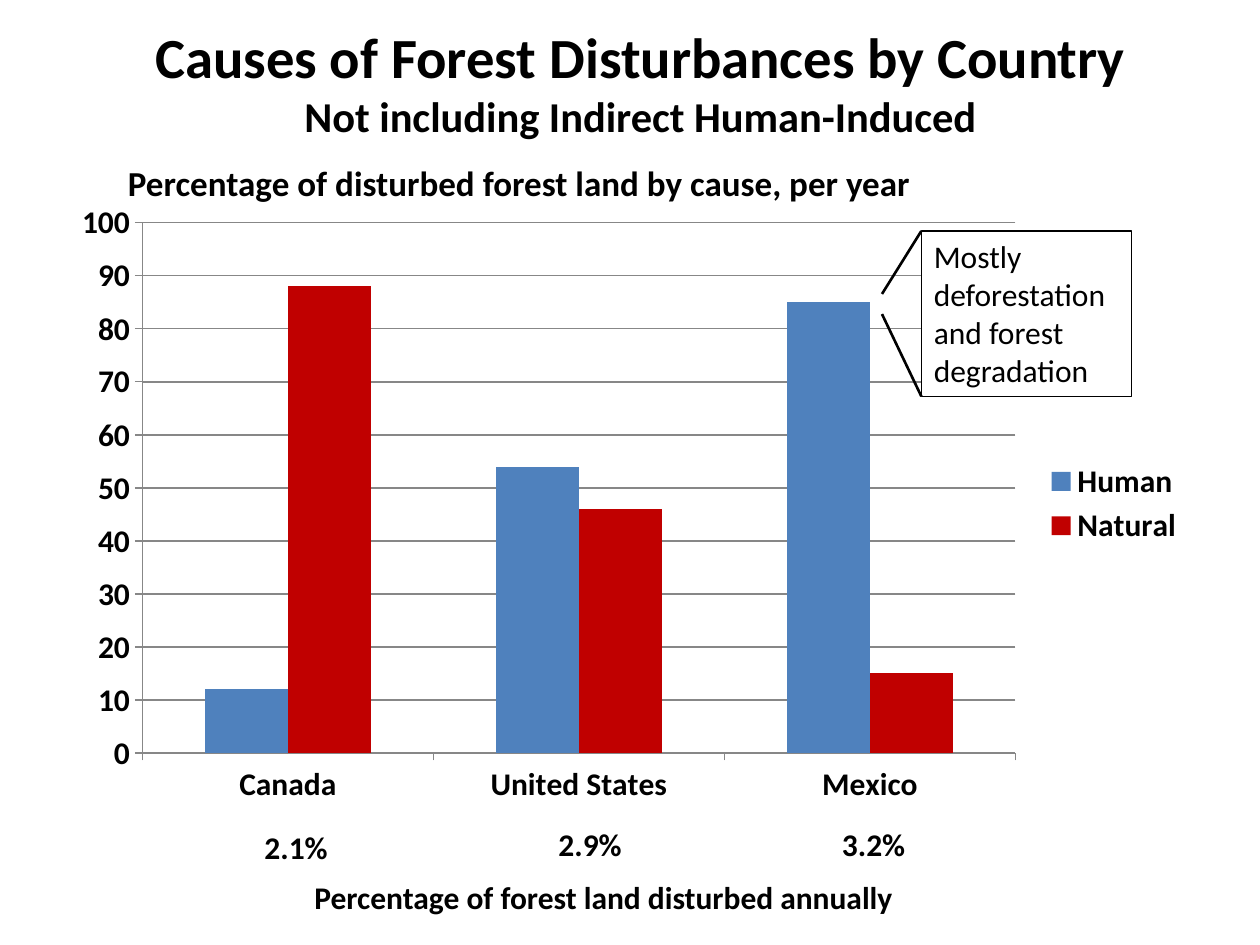
from dataclasses import dataclass

import pptx
import pptx.chart.data
import pptx.dml.color
import pptx.enum.chart
import pptx.enum.shapes
import pptx.enum.text
import pptx.oxml
import pptx.util
from pptx.util import Pt

ALIGN = pptx.enum.text.PP_ALIGN
ANCHOR = pptx.enum.text.MSO_ANCHOR


def rgb(code: str) -> pptx.dml.color.RGBColor:
    return pptx.dml.color.RGBColor.from_string(code)


@dataclass(frozen=True)
class Theme:
    font: str = "Calibri"
    ink: str = "000000"
    paper: str = "FFFFFF"
    grid: str = "878787"
    human: str = "4F81BD"
    natural: str = "C00000"
    title: float = 32.4
    subtitle: float = 24.3
    heading: float = 20
    body: float = 18


@dataclass(frozen=True)
class Box:
    left: float
    top: float
    width: float
    height: float

    def lengths(self) -> list[pptx.util.Length]:
        return [Pt(v) for v in (self.left, self.top, self.width, self.height)]


@dataclass(frozen=True)
class Label:
    box: Box
    lines: tuple[tuple[str, float], ...]
    align: ALIGN = ALIGN.LEFT
    anchor: ANCHOR = ANCHOR.TOP
    bold: bool = True


@dataclass(frozen=True)
class Cause:
    name: str
    shares: tuple[int, ...]
    color: str


THEME = Theme()


def write(frame, label: Label) -> None:
    """Write the lines of a label as runs of one paragraph."""
    frame.word_wrap = True
    frame.vertical_anchor = label.anchor
    paragraph = frame.paragraphs[0]
    paragraph.alignment = label.align
    for index, (text, size) in enumerate(label.lines):
        if index:
            paragraph.add_line_break()
        run = paragraph.add_run()
        run.text = text
        run.font.name = THEME.font
        run.font.size = Pt(size)
        run.font.bold = label.bold
        run.font.color.rgb = rgb(THEME.ink)


def add_label(slide, label: Label) -> None:
    write(slide.shapes.add_textbox(*label.box.lengths()).text_frame, label)


def add_callout(slide, label: Label) -> None:
    callout = slide.shapes.add_shape(
        pptx.enum.shapes.MSO_SHAPE.RECTANGLE, *label.box.lengths())
    callout.shadow.inherit = False
    callout.fill.solid()
    callout.fill.fore_color.rgb = rgb(THEME.paper)
    callout.line.color.rgb = rgb(THEME.ink)
    callout.line.width = Pt(0.75)
    write(callout.text_frame, label)


def add_pointer(slide, start: tuple[float, float], end: tuple[float, float]) -> None:
    pointer = slide.shapes.add_connector(
        pptx.enum.shapes.MSO_CONNECTOR.STRAIGHT, *[Pt(v) for v in start + end])
    pointer.line.color.rgb = rgb(THEME.ink)
    pointer.line.width = Pt(1.5)
    properties = pointer._element.spPr
    properties.append(properties.makeelement(pptx.oxml.ns.qn("a:effectLst"), {}))


def set_plot_area(chart, x: float, y: float, w: float, h: float) -> None:
    """Fix the inner plot area, in fractions of the chart."""
    values = "".join(f'<c:{tag} val="{value}"/>' for tag, value in (
        ("layoutTarget", "inner"), ("xMode", "edge"), ("yMode", "edge"),
        ("x", x), ("y", y), ("w", w), ("h", h)))
    layout = pptx.oxml.parse_xml(
        f'<c:layout {pptx.oxml.ns.nsdecls("c")}>'
        f"<c:manualLayout>{values}</c:manualLayout></c:layout>")
    plot_area = chart._chartSpace.chart.plotArea
    for old in plot_area.findall(pptx.oxml.ns.qn("c:layout")):
        plot_area.remove(old)
    plot_area.insert(0, layout)


def add_cause_chart(slide, box: Box, countries: list[str], causes: list[Cause]) -> None:
    data = pptx.chart.data.CategoryChartData()
    data.categories = countries
    for cause in causes:
        data.add_series(cause.name, cause.shares)
    chart = slide.shapes.add_chart(
        pptx.enum.chart.XL_CHART_TYPE.COLUMN_CLUSTERED, *box.lengths(), data).chart
    chart.has_title = False
    chart.font.name = THEME.font
    chart.font.size = Pt(THEME.body)
    chart.font.bold = True
    chart.font.color.rgb = rgb(THEME.ink)

    plot = chart.plots[0]
    plot.vary_by_categories = False
    plot.gap_width = 150
    plot.overlap = 0
    for series, cause in zip(plot.series, causes):
        series.format.fill.solid()
        series.format.fill.fore_color.rgb = rgb(cause.color)

    chart.value_axis.minimum_scale = 0
    chart.value_axis.maximum_scale = 100
    chart.value_axis.major_unit = 10
    chart.value_axis.has_major_gridlines = True
    for axis in (chart.category_axis, chart.value_axis):
        axis.major_tick_mark = pptx.enum.chart.XL_TICK_MARK.OUTSIDE
        axis.format.line.color.rgb = rgb(THEME.grid)
    chart.value_axis.major_gridlines.format.line.color.rgb = rgb(THEME.grid)

    chart.has_legend = True
    chart.legend.position = pptx.enum.chart.XL_LEGEND_POSITION.RIGHT
    chart.legend.include_in_layout = False
    set_plot_area(chart, 0.07, 0.05, 0.77, 0.85)


def main() -> None:
    deck = pptx.Presentation()
    deck.slide_width, deck.slide_height = Pt(720), Pt(540)
    slide = deck.slides.add_slide(deck.slide_layouts[6])

    # Title
    add_label(slide, Label(
        Box(36, 12, 660, 69),
        (("Causes of Forest Disturbances by Country", THEME.title),
         ("Not including Indirect Human-Induced", THEME.subtitle)),
        ALIGN.CENTER, ANCHOR.MIDDLE))

    # Chart and its heading
    add_cause_chart(
        slide, Box(36, 109.5, 648, 356.5), ["Canada", "United States", "Mexico"],
        [Cause("Human", (12, 54, 85), THEME.human),
         Cause("Natural", (88, 46, 15), THEME.natural)])
    add_label(slide, Label(
        Box(66, 88.5, 534, 31.5),
        (("Percentage of disturbed forest land by cause, per year", THEME.heading),)))

    # Annual share of disturbed land under each country
    for left, top, share in ((144, 469.5, "2.1%"), (312, 468, "2.9%"), (474, 468, "3.2%")):
        add_label(slide, Label(Box(left, top, 60, 29), ((share, THEME.body),)))
    add_label(slide, Label(
        Box(144, 498, 402, 29),
        (("Percentage of forest land disturbed annually", THEME.body),), ALIGN.CENTER))

    # Callout pointing at the human share in Mexico
    note = Box(526.5, 132, 120, 94.5)
    add_callout(slide, Label(
        note, (("Mostly deforestation and forest degradation", THEME.body),), bold=False))
    add_pointer(slide, (504, 168), (note.left, note.top))
    add_pointer(slide, (504, 179.5), (note.left, note.top + note.height))

    deck.save("out.pptx")


if __name__ == "__main__":
    main()
